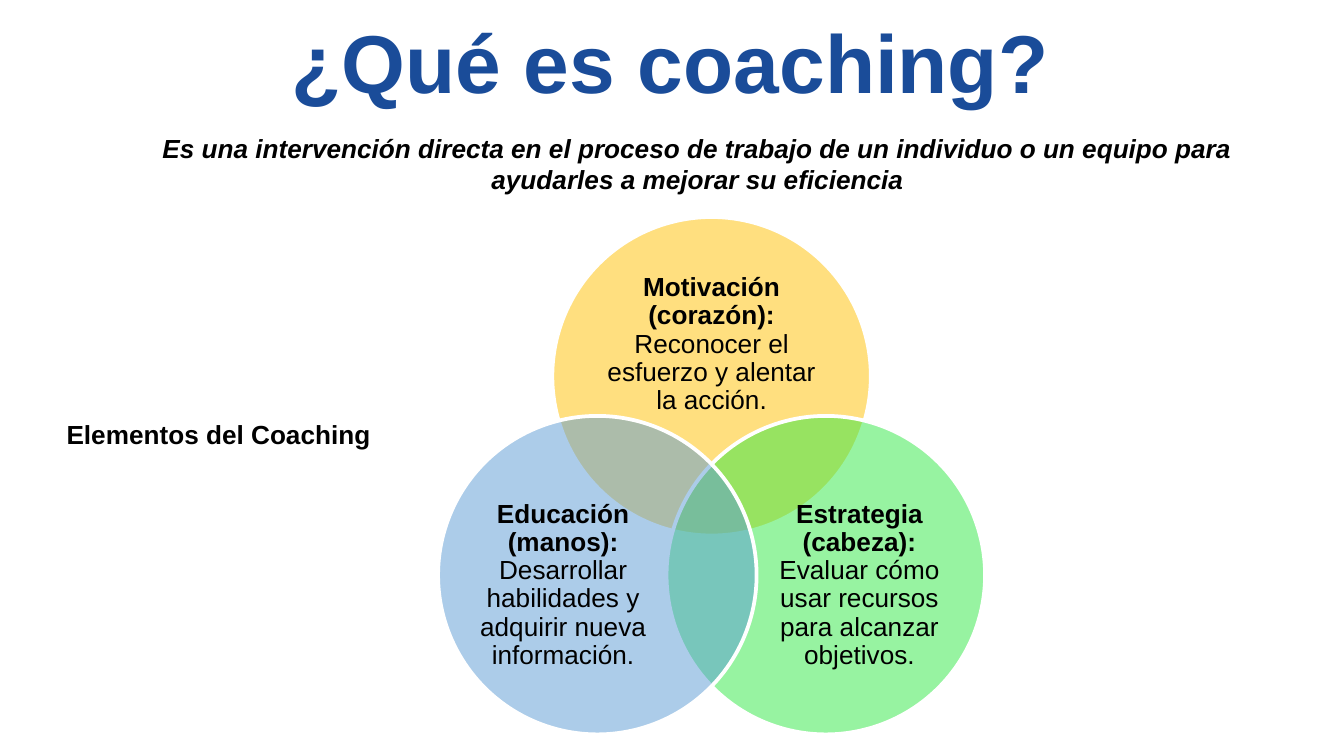
from dataclasses import dataclass

from lxml import etree
from pptx import Presentation
from pptx.dml.color import RGBColor
from pptx.enum.shapes import MSO_SHAPE
from pptx.enum.text import MSO_ANCHOR, PP_ALIGN
from pptx.oxml.ns import qn
from pptx.util import Pt

EMU_PER_PX = 4572
ELLIPSE = MSO_SHAPE.OVAL
LEFT, CENTER = PP_ALIGN.LEFT, PP_ALIGN.CENTER
TOP, MIDDLE, BOTTOM = MSO_ANCHOR.TOP, MSO_ANCHOR.MIDDLE, MSO_ANCHOR.BOTTOM


@dataclass(frozen=True)
class Theme:
    font: str = "Arial"
    title_color: str = "1A4C99"
    text_color: str = "000000"
    outline: str = "FFFFFF"
    heart: str = "FFC000"
    head: str = "30E845"
    hands: str = "5B9BD5"
    title_size: int = 44
    body_size: int = 14
    outline_width: int = 2
    opacity: int = 50


def px(length):
    return length * EMU_PER_PX


class SlideBuilder:
    def __init__(self, page, theme):
        self.page = page
        self.theme = theme

    def circle(self, parent, left, top, diameter, color):
        shape = parent.shapes.add_shape(
            ELLIPSE, px(left), px(top), px(diameter), px(diameter))
        shape.shadow.inherit = False
        shape.fill.solid()
        shape.fill.fore_color.rgb = RGBColor.from_string(color)
        fill_color = shape.element.spPr.find(qn("a:solidFill"))[0]
        alpha = etree.SubElement(fill_color, qn("a:alpha"))
        alpha.set("val", str(self.theme.opacity * 1000))
        shape.line.color.rgb = RGBColor.from_string(self.theme.outline)
        shape.line.width = Pt(self.theme.outline_width)

    def text(self, parent, area, spans, size=None, color=None, align=CENTER,
             anchor=TOP, spacing=None, insets=(20, 10, 20, 10), italic=False):
        box = parent.shapes.add_textbox(*map(px, area))
        frame = box.text_frame
        frame.word_wrap = True
        frame.vertical_anchor = anchor
        (frame.margin_left, frame.margin_top,
         frame.margin_right, frame.margin_bottom) = map(px, insets)
        para = frame.paragraphs[0]
        para.alignment = align
        if spacing:
            para.line_spacing = spacing
        for words, bold in spans:
            span = para.add_run()
            span.text = words
            span.font.name = self.theme.font
            span.font.size = Pt(size or self.theme.body_size)
            span.font.bold = bold
            span.font.italic = italic
            span.font.color.rgb = RGBColor.from_string(
                color or self.theme.text_color)

    def venn(self, diameter, elements):
        group = self.page.shapes.add_group_shape()
        for left, top, color, area, heading, detail in elements:
            self.circle(group, left, top, diameter, color)
            self.text(group, area, [(heading, True), (" " + detail, False)],
                      anchor=MIDDLE, spacing=0.9, insets=(0, 0, 0, 0))


def main():
    theme = Theme()
    deck = Presentation()
    deck.slide_width, deck.slide_height = px(2000), px(1125)
    page = deck.slides.add_slide(deck.slide_layouts[6])
    builder = SlideBuilder(page, theme)

    builder.text(page, (37, 49, 1922, 124), [("¿Qué es coaching?", True)],
                 size=theme.title_size, color=theme.title_color,
                 anchor=BOTTOM, spacing=0.8)

    center_left, offset, upper, lower = 822, 170, 323, 619
    builder.venn(474, [
        (center_left, upper, theme.heart, (885, 407, 348, 212),
         "Motivación (corazón):", "Reconocer el esfuerzo y alentar la acción."),
        (center_left + offset, lower, theme.head, (1137, 741, 284, 260),
         "Estrategia (cabeza):",
         "Evaluar cómo usar recursos para alcanzar objetivos."),
        (center_left - offset, lower, theme.hands, (696, 741, 284, 260),
         "Educación (manos):",
         "Desarrollar habilidades y adquirir nueva información."),
    ])

    builder.text(page, (68, 613, 552, 68), [("Elementos del Coaching", True)],
                 align=LEFT, insets=(31, 10, 20, 10))
    builder.text(page, (143, 187, 1790, 114),
                 [("Es una intervención directa en el proceso de trabajo de un "
                   "individuo o un equipo para ayudarles a mejorar su "
                   "eficiencia", True)], italic=True)
    deck.save("out.pptx")


if __name__ == "__main__":
    main()
